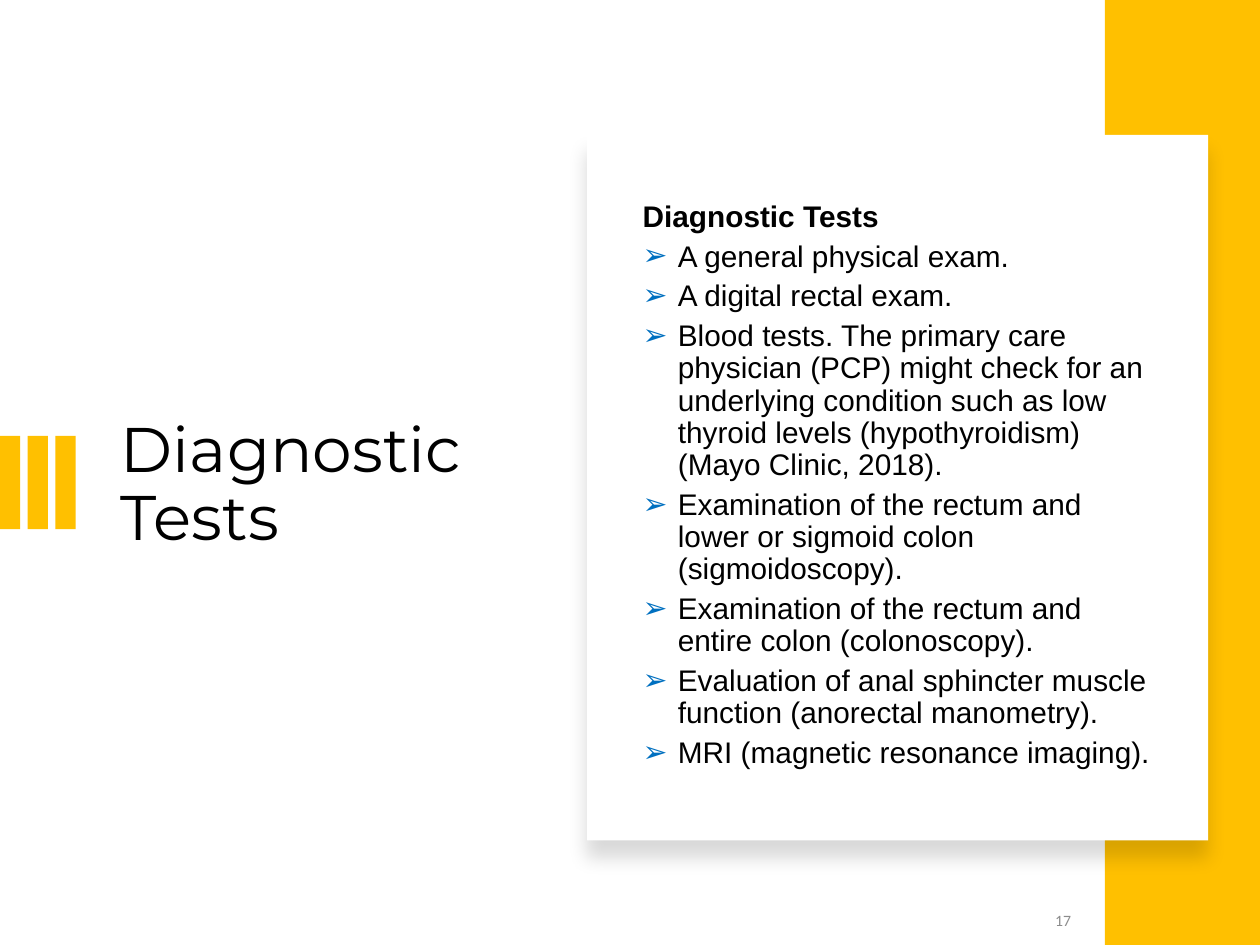
from dataclasses import dataclass

from lxml import etree
from pptx import Presentation
from pptx.dml.color import RGBColor
from pptx.enum.shapes import MSO_SHAPE
from pptx.enum.text import MSO_ANCHOR, MSO_AUTO_SIZE, PP_ALIGN
from pptx.oxml.ns import qn
from pptx.util import Inches, Pt

RECTANGLE = MSO_SHAPE.RECTANGLE
MIDDLE = MSO_ANCHOR.MIDDLE
NO_AUTOFIT = MSO_AUTO_SIZE.NONE
LEFT = PP_ALIGN.LEFT
RIGHT = PP_ALIGN.RIGHT

WIDTH, HEIGHT = 10, 7.5
TITLE_AND_CONTENT = 1
CONTENT_TOP, CONTENT_HEIGHT = 1.46, 4.79
BAR_COUNT, BAR_PITCH = 3, 0.22
BULLET_INDENT = 0.28


@dataclass(frozen=True)
class Theme:
    accent: str = "FFC000"
    card: str = "FFFFFF"
    text: str = "000000"
    bullet: str = "0070C0"
    muted: str = "8C8C8C"
    title_font: str = "Montserrat"
    body_font: str = "Arial"
    number_font: str = "Calibri"
    title_size: int = 36
    body_size: int = 17
    number_size: int = 9


THEME = Theme()

TITLE = "Diagnostic Tests"
HEADING = "Diagnostic Tests"
TESTS = [
    "A general physical exam.",
    "A digital rectal exam.",
    "Blood tests. The primary care physician (PCP) might check for an "
    "underlying condition such as low thyroid levels (hypothyroidism) "
    "(Mayo Clinic, 2018).",
    "Examination of the rectum and lower or sigmoid colon (sigmoidoscopy).",
    "Examination of the rectum and entire colon (colonoscopy).",
    "Evaluation of anal sphincter muscle function (anorectal manometry).",
    "MRI (magnetic resonance imaging).",
]
SLIDE_NUMBER = "17"


def add_rectangle(shapes, left, top, width, height, color):
    box = [Inches(length) for length in (left, top, width, height)]
    shape = shapes.add_shape(RECTANGLE, *box)
    shape.fill.solid()
    shape.fill.fore_color.rgb = RGBColor.from_string(color)
    shape.line.fill.background()
    shape.shadow.inherit = False
    return shape


def add_soft_shadow(shape):
    effects = shape.element.spPr.find(qn("a:effectLst"))
    shadow = etree.SubElement(
        effects, qn("a:outerShdw"), blurRad=str(Pt(11)), dist=str(Pt(10)),
        dir="5400000", algn="t", rotWithShape="0")
    color = etree.SubElement(shadow, qn("a:srgbClr"), val=THEME.text)
    etree.SubElement(color, qn("a:alpha"), val="15000")


def place_text(shape, left, top, width, height):
    shape.left, shape.top = Inches(left), Inches(top)
    shape.width, shape.height = Inches(width), Inches(height)
    frame = shape.text_frame
    frame.word_wrap = True
    frame.auto_size = NO_AUTOFIT
    frame.vertical_anchor = MIDDLE
    return frame


def format_paragraph(paragraph, font, size, color, bold=False, align=LEFT):
    paragraph.alignment = align
    paragraph.font.name = font
    paragraph.font.size = Pt(size)
    paragraph.font.bold = bold
    paragraph.font.color.rgb = RGBColor.from_string(color)


def set_bullet(paragraph, character=None):
    properties = paragraph._p.get_or_add_pPr()
    indent = Inches(BULLET_INDENT) if character else 0
    properties.set("marL", str(indent))
    properties.set("indent", str(-indent))
    if character is None:
        etree.SubElement(properties, qn("a:buNone"))
        return
    color = etree.SubElement(properties, qn("a:buClr"))
    etree.SubElement(color, qn("a:srgbClr"), val=THEME.bullet)
    etree.SubElement(properties, qn("a:buFont"), typeface=THEME.body_font)
    etree.SubElement(properties, qn("a:buChar"), char=character)


def add_backdrop(slide):
    bars = slide.shapes.add_group_shape()
    for index in range(BAR_COUNT):
        add_rectangle(bars.shapes, index * BAR_PITCH, 3.46, 0.16, 0.74, THEME.accent)
    add_rectangle(slide.shapes, 8.77, 0, WIDTH - 8.77, HEIGHT, THEME.accent)
    card = add_rectangle(slide.shapes, 4.66, 1.07, 4.93, 5.6, THEME.card)
    add_soft_shadow(card)


def fill_title(slide):
    frame = place_text(slide.shapes.title, 0.86, CONTENT_TOP, 3.19, CONTENT_HEIGHT)
    frame.text = TITLE
    paragraph = frame.paragraphs[0]
    paragraph.line_spacing = 0.9
    format_paragraph(paragraph, THEME.title_font, THEME.title_size, THEME.text)


def fill_body(slide):
    body = slide.placeholders[1]
    slide.shapes.element.append(body.element)
    frame = place_text(body, 5, CONTENT_TOP, 4.32, CONTENT_HEIGHT)
    frame.text = "\n".join([HEADING, *TESTS])
    for index, paragraph in enumerate(frame.paragraphs):
        is_heading = index == 0
        set_bullet(paragraph, None if is_heading else "➢")
        paragraph.line_spacing = 0.9
        paragraph.space_before = Pt(0 if is_heading else 2.2)
        paragraph.space_after = Pt(2.2)
        format_paragraph(paragraph, THEME.body_font, THEME.body_size,
                         THEME.text, bold=is_heading)


def add_slide_number(slide):
    frame = place_text(slide.shapes.add_textbox(0, 0, 0, 0), 7.78, 7.1, 0.82, 0.4)
    frame.text = SLIDE_NUMBER
    format_paragraph(frame.paragraphs[0], THEME.number_font, THEME.number_size,
                     THEME.muted, align=RIGHT)


def main():
    presentation = Presentation()
    presentation.slide_width = Inches(WIDTH)
    presentation.slide_height = Inches(HEIGHT)
    layout = presentation.slide_layouts[TITLE_AND_CONTENT]
    slide = presentation.slides.add_slide(layout)
    fill_title(slide)
    add_backdrop(slide)
    fill_body(slide)
    add_slide_number(slide)
    presentation.save("out.pptx")


if __name__ == "__main__":
    main()
